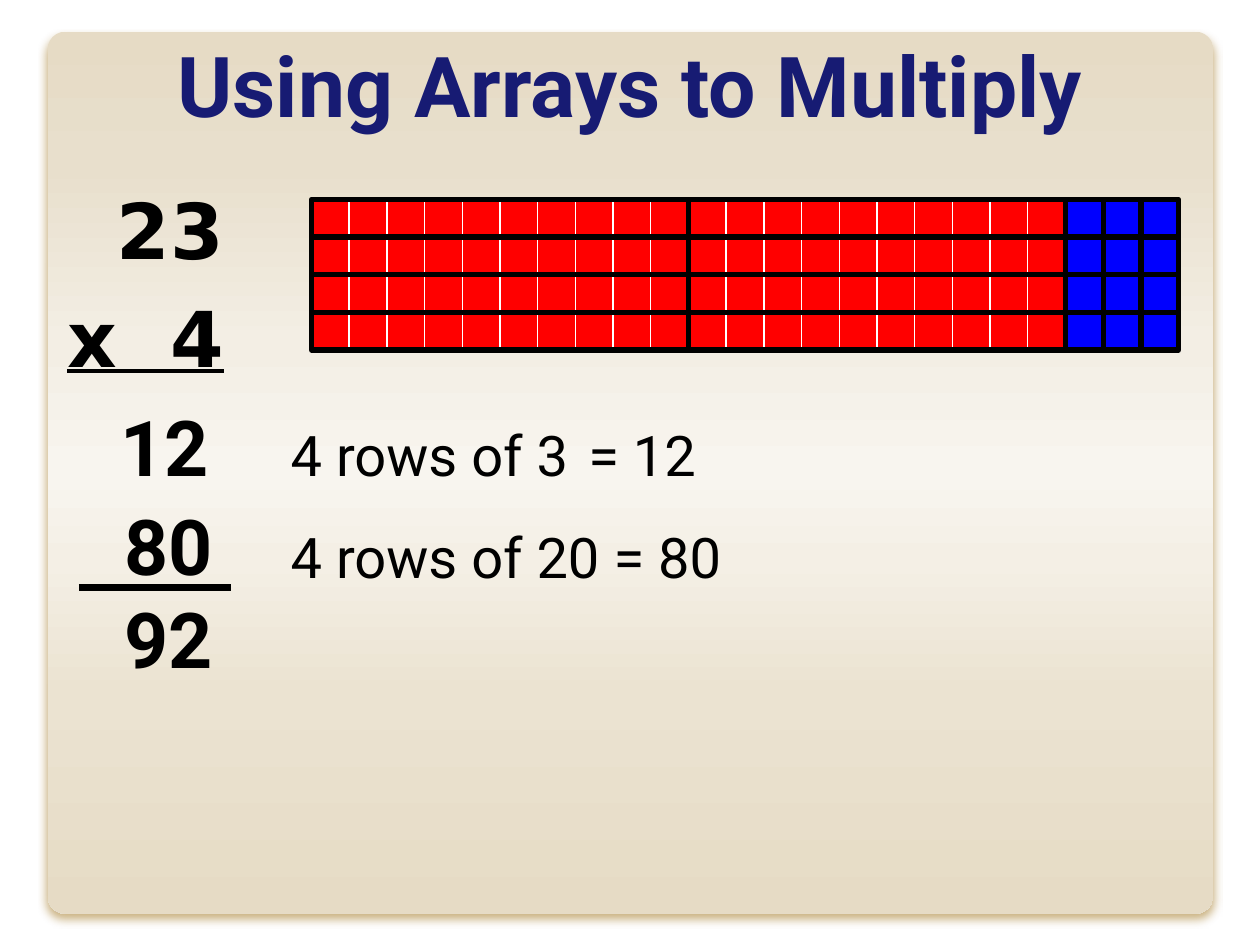
from dataclasses import dataclass
from lxml import etree
from pptx import Presentation
from pptx.dml.color import RGBColor
from pptx.enum import shapes, text
from pptx.oxml import parse_xml
from pptx.oxml.ns import nsdecls, qn
from pptx.util import Cm, Pt


@dataclass(frozen=True)
class Theme:
    title: str = "171B73"
    ink: str = "000000"
    ones: str = "0000FF"
    tens: str = "FF0000"
    grid: str = "FFFFFF"
    shadow: str = "956400"
    panel: tuple = ((0, "E6DBC5"), (15, "E8DFCC"), (35, "F3EEE4"),
                    (50, "F8F5EF"), (60, "F4EFE5"), (75, "EBE3D1"), (100, "E6DBC5"))
    font: str = "Roboto"
    sum_font: str = "DejaVu Sans"
    title_size: int = 48
    number_size: int = 44
    body_size: int = 32


T = Theme()

# Content
TITLE = "Using Arrays to Multiply"
PROBLEM = [("23", False), ("x  4", True)]
NUMBERS = [("12", 2.18, 7.92), ("80", 2.26, 9.93), ("92", 2.26, 11.81)]  # text, left, top
EXPLANATIONS = [("4 rows of 3", "= 12", 11.61, 8.36),  # rows, result, result left, top
                ("4 rows of 20", "= 80", 12.12, 10.41)]

# Array of unit squares: two blocks of ten and one of three, four rows high
ROWS, CELL = 4, 0.76
ARRAY_LEFT, ARRAY_TOP = 6.28, 4.02
TENS_STARTS, TEN = (0, 10), 10
ONES_START, ONES = 20, 3


def rgb(value):
    return RGBColor.from_string(value)


def write(tf, content, size, font=T.font, color=T.ink, bold=False, underline=False,
          align=text.PP_ALIGN.LEFT, before=0, first=True):
    p = tf.paragraphs[0] if first else tf.add_paragraph()
    p.alignment = align
    p.space_before = Pt(before)
    r = p.add_run()
    r.text = content
    f = r.font
    f.name, f.size, f.bold, f.underline = font, Pt(size), bold, underline
    f.color.rgb = rgb(color)


def text_box(slide, left, top, width, height):
    tf = slide.shapes.add_textbox(Cm(left), Cm(top), Cm(width), Cm(height)).text_frame
    tf.word_wrap = True
    return tf


def rect(group, col, row, cols, line, width, fill=None):
    """Rectangle one row high, placed on the grid of unit squares."""
    sp = group.shapes.add_shape(
        shapes.MSO_SHAPE.RECTANGLE, Cm(ARRAY_LEFT + col * CELL), Cm(ARRAY_TOP + row * CELL),
        Cm(cols * CELL), Cm(CELL))
    sp.shadow.inherit = False
    if fill:
        sp.fill.solid()
        sp.fill.fore_color.rgb = rgb(fill)
    else:
        sp.fill.background()
    sp.line.color.rgb = rgb(line)
    sp.line.width = Pt(width)


def add_panel(slide):
    sp = slide.shapes.add_shape(shapes.MSO_SHAPE.ROUNDED_RECTANGLE,
                                Cm(0.96), Cm(0.64), Cm(23.5), Cm(17.78))
    sp.adjustments[0] = 0.02
    sp.line.fill.background()
    stops = "".join(f'<a:gs pos="{pos * 1000}"><a:srgbClr val="{c}"/></a:gs>'
                    for pos, c in T.panel)
    gradient = parse_xml(f'<a:gradFill {nsdecls("a")}><a:gsLst>{stops}</a:gsLst>'
                         '<a:lin ang="5400000" scaled="0"/></a:gradFill>')
    shadow = parse_xml(
        f'<a:effectLst {nsdecls("a")}><a:outerShdw blurRad="{Pt(5)}" dist="{Pt(3.6)}" '
        f'dir="5400000" algn="ctr" rotWithShape="0"><a:srgbClr val="{T.shadow}">'
        '<a:alpha val="50000"/></a:srgbClr></a:outerShdw></a:effectLst>')
    props = sp.element.spPr
    props.find(qn("a:prstGeom")).addnext(gradient)
    props.append(shadow)
    # Send behind the title
    tree = slide.shapes.element
    tree.remove(sp.element)
    tree.insert(2, sp.element)


def add_title(slide):
    sp = slide.shapes.title
    sp.left, sp.top, sp.width, sp.height = Cm(1.27), Cm(0.1), Cm(22.86), Cm(3.18)
    tf = sp.text_frame
    tf.auto_size = text.MSO_AUTO_SIZE.NONE
    tf.vertical_anchor = text.MSO_ANCHOR.MIDDLE
    write(tf, TITLE, T.title_size, color=T.title, bold=True, align=text.PP_ALIGN.CENTER)


def add_array(slide):
    ones = slide.shapes.add_group_shape()
    for row in range(ROWS):
        for col in range(ONES):
            rect(ones, ONES_START + col, row, 1, T.ink, 3, T.ones)
    for start in TENS_STARTS:
        tens = slide.shapes.add_group_shape()
        for row in range(ROWS):
            for col in range(TEN):
                rect(tens, start + col, row, 1, T.grid, 0.75, T.tens)
    for start in TENS_STARTS:
        outlines = slide.shapes.add_group_shape()
        for row in range(ROWS):
            rect(outlines, start, row, TEN, T.ink, 3)


def add_working(slide):
    # Problem
    tf = text_box(slide, 0.2, 3.56, 4.45, 5.51)
    tf.margin_left = tf.margin_right = Cm(0.13)
    for i, (line, underline) in enumerate(PROBLEM):
        write(tf, line, T.number_size, font=T.sum_font, bold=True, underline=underline,
              align=text.PP_ALIGN.RIGHT, before=8.8, first=i == 0)
    # Partial products and total
    for number, left, top in NUMBERS:
        write(text_box(slide, left, top, 3.05, 2.11), number, T.number_size, bold=True)
    # Explanations
    for rows, result, left, top in EXPLANATIONS:
        write(text_box(slide, 5.61, top, 7.57, 1.6), rows, T.body_size)
        write(text_box(slide, left, top, 3.05, 1.6), result, T.body_size)
    # Sum line
    line = slide.shapes.add_connector(shapes.MSO_CONNECTOR.STRAIGHT,
                                      Cm(1.59), Cm(11.84), Cm(4.65), Cm(11.84))
    line.line.color.rgb = rgb(T.ink)
    line.line.width = Pt(3.75)
    etree.SubElement(line.element.spPr, qn("a:effectLst"))


def main():
    prs = Presentation()
    prs.slide_width, prs.slide_height = Cm(25.4), Cm(19.05)
    slide = prs.slides.add_slide(prs.slide_layouts[5])
    add_panel(slide)
    add_title(slide)
    add_working(slide)
    add_array(slide)
    prs.save("out.pptx")


if __name__ == "__main__":
    main()
